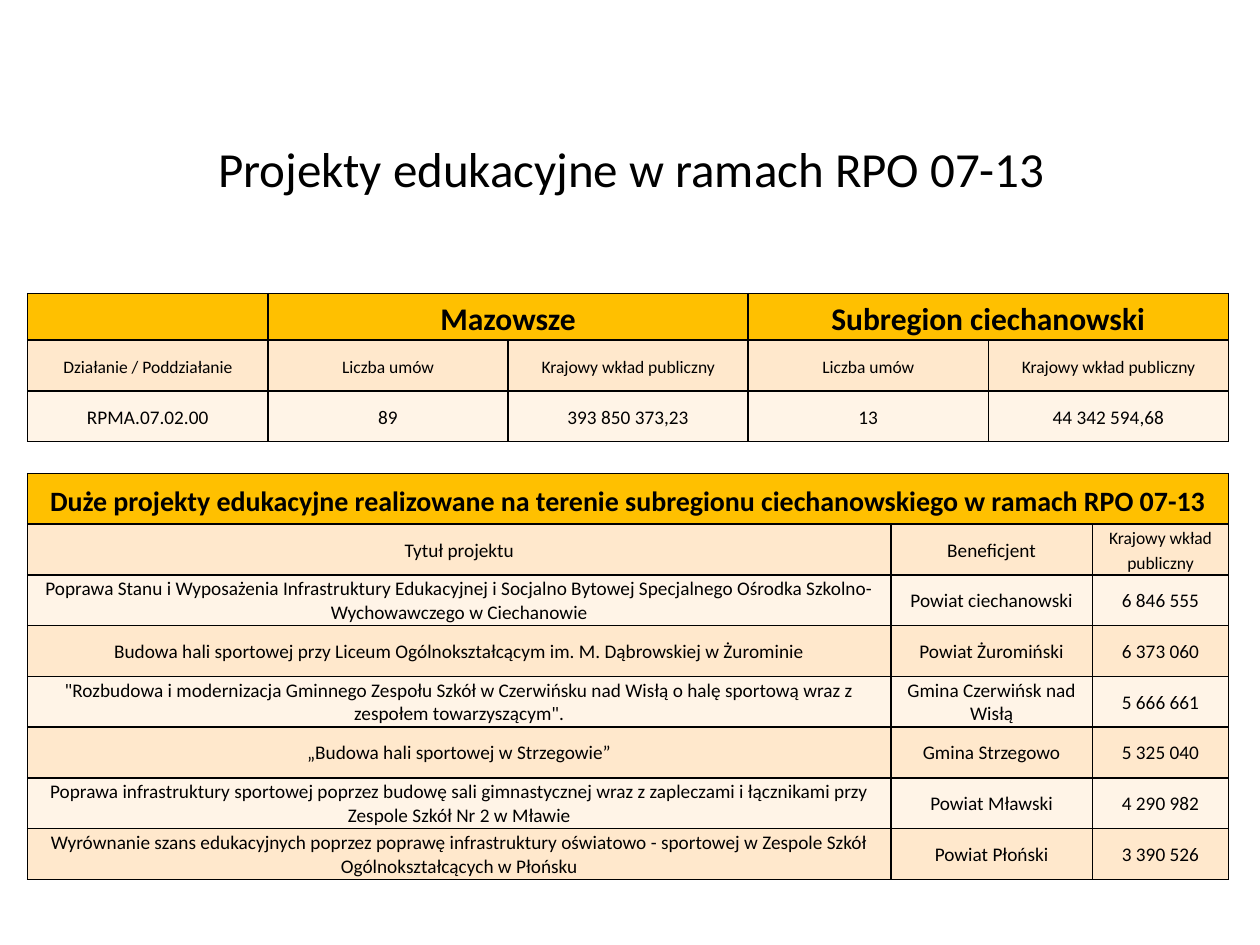
from lxml.etree import SubElement
from pptx import Presentation
from pptx.dml.color import RGBColor
from pptx.enum.text import MSO_ANCHOR, PP_ALIGN
from pptx.oxml.ns import qn
from pptx.util import Inches, Pt

COLORS = {"text": "000000", "header": "FFC000", "band": "FFE8CC", "light": "FFF4E7"}
FONT = "Calibri"


def style_paragraph(para, size, spacing, bold=False):
    para.alignment = PP_ALIGN.CENTER
    para.line_spacing = spacing
    para.font.name = FONT
    para.font.size = Pt(size)
    para.font.bold = bold
    para.font.color.rgb = RGBColor.from_string(COLORS["text"])


def style_cell(cell, text, fill, size, bold=False, compact=False):
    cell.text = text
    cell.vertical_anchor = MSO_ANCHOR.MIDDLE
    cell.margin_left = cell.margin_right = Inches(0.01 if compact else 0.05)
    cell.margin_top = Inches(0.01 if compact else 0)
    cell.margin_bottom = 0
    style_paragraph(cell.text_frame.paragraphs[0], size, 1.0 if compact else 1.15, bold)
    properties = cell._tc.get_or_add_tcPr()
    for side in ("lnL", "lnR", "lnT", "lnB"):
        line = SubElement(properties, qn(f"a:{side}"), w=str(Pt(1)))
        line_fill = SubElement(line, qn("a:solidFill"))
        SubElement(line_fill, qn("a:srgbClr"), val=COLORS["text"])
    cell.fill.solid()
    cell.fill.fore_color.rgb = RGBColor.from_string(COLORS[fill])


deck = Presentation()
deck.slide_width, deck.slide_height = Inches(10), Inches(7.5)
slide = deck.slides.add_slide(deck.slide_layouts[6])

title = slide.shapes.add_textbox(Inches(0.7), Inches(1.06), Inches(8.62), Inches(0.61))
title.text_frame.word_wrap = True
title.text_frame.vertical_anchor = MSO_ANCHOR.MIDDLE
title.text_frame.text = "Projekty edukacyjne w ramach RPO 07-13"
style_paragraph(title.text_frame.paragraphs[0], 28, 0.9)

summary_rows = [
    ["", "Mazowsze", "", "Subregion ciechanowski", ""],
    ["Działanie / Poddziałanie"] + ["Liczba umów", "Krajowy wkład publiczny"] * 2,
    ["RPMA.07.02.00", "89", "393 850 373,23", "13", "44 342 594,68"],
]
project_rows = [
    ["Duże projekty edukacyjne realizowane na terenie subregionu ciechanowskiego w ramach RPO 07-13", "", ""],
    ["Tytuł projektu", "Beneficjent", "Krajowy wkład publiczny"],
    ["Poprawa Stanu i Wyposażenia Infrastruktury Edukacyjnej i Socjalno Bytowej Specjalnego Ośrodka "
     "Szkolno-Wychowawczego w Ciechanowie", "Powiat ciechanowski", "6 846 555"],
    ["Budowa hali sportowej przy Liceum Ogólnokształcącym im. M. Dąbrowskiej w Żurominie",
     "Powiat Żuromiński", "6 373 060"],
    ['"Rozbudowa i modernizacja Gminnego Zespołu Szkół w Czerwińsku nad Wisłą o halę sportową '
     'wraz z zespołem towarzyszącym".', "Gmina Czerwińsk nad Wisłą", "5 666 661"],
    ["„Budowa hali sportowej w Strzegowie”", "Gmina Strzegowo", "5 325 040"],
    ["Poprawa infrastruktury sportowej poprzez budowę sali gimnastycznej wraz z zapleczami i łącznikami "
     "przy Zespole Szkół Nr 2 w Mławie", "Powiat Mławski", "4 290 982"],
    ["Wyrównanie szans edukacyjnych poprzez poprawę infrastruktury oświatowo - sportowej w Zespole Szkół "
     "Ogólnokształcących w Płońsku", "Powiat Płoński", "3 390 526"],
]
tables = [
    (summary_rows, 2.33, [1.906] * 5, 0.37, 18, [10] * 5, [(1, 2), (3, 4)]),
    (project_rows, 3.76, [6.85, 1.6, 1.08], 0.4, 16, [11, 11, 10], [(0, 2)]),
]

for rows, top, widths, header_height, header_size, label_sizes, merges in tables:
    frame = slide.shapes.add_table(len(rows), len(widths), Inches(0.22), Inches(top),
                                   Inches(9.53), Inches(0.4 * len(rows)))
    table = frame.table
    for column, width in zip(table.columns, widths):
        column.width = Inches(width)
    for row_index, texts in enumerate(rows):
        table.rows[row_index].height = Inches(0.403 if row_index else header_height)
        for column_index, text in enumerate(texts):
            cell = table.cell(row_index, column_index)
            if row_index == 0:
                style_cell(cell, text, "header", header_size, bold=True)
            elif row_index == 1:
                style_cell(cell, text, "band", label_sizes[column_index])
            else:
                fill = "band" if row_index % 2 else "light"
                style_cell(cell, text, fill, 11, compact=rows is project_rows)
    for first, last in merges:
        table.cell(0, first).merge(table.cell(0, last))

deck.save("out.pptx")
